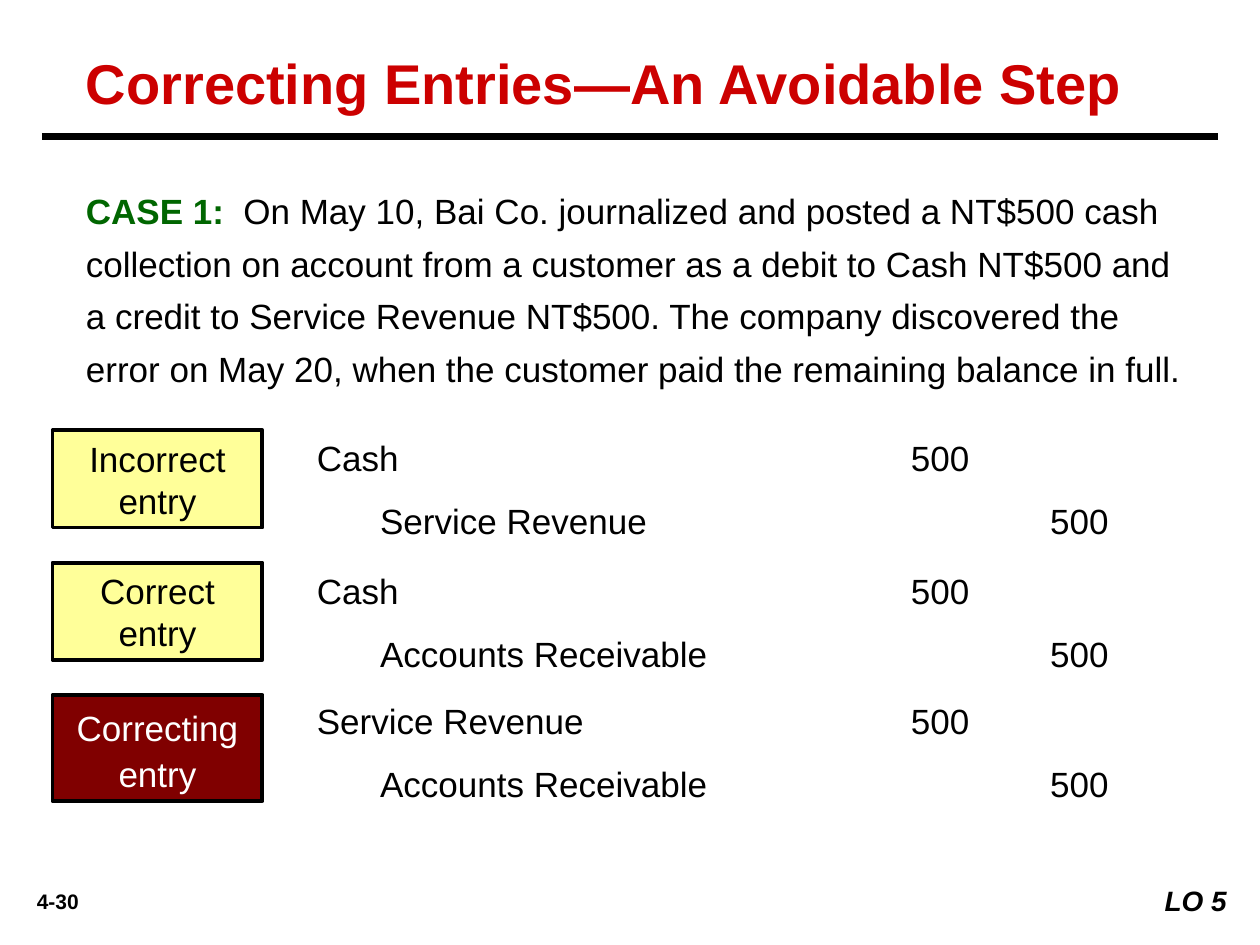
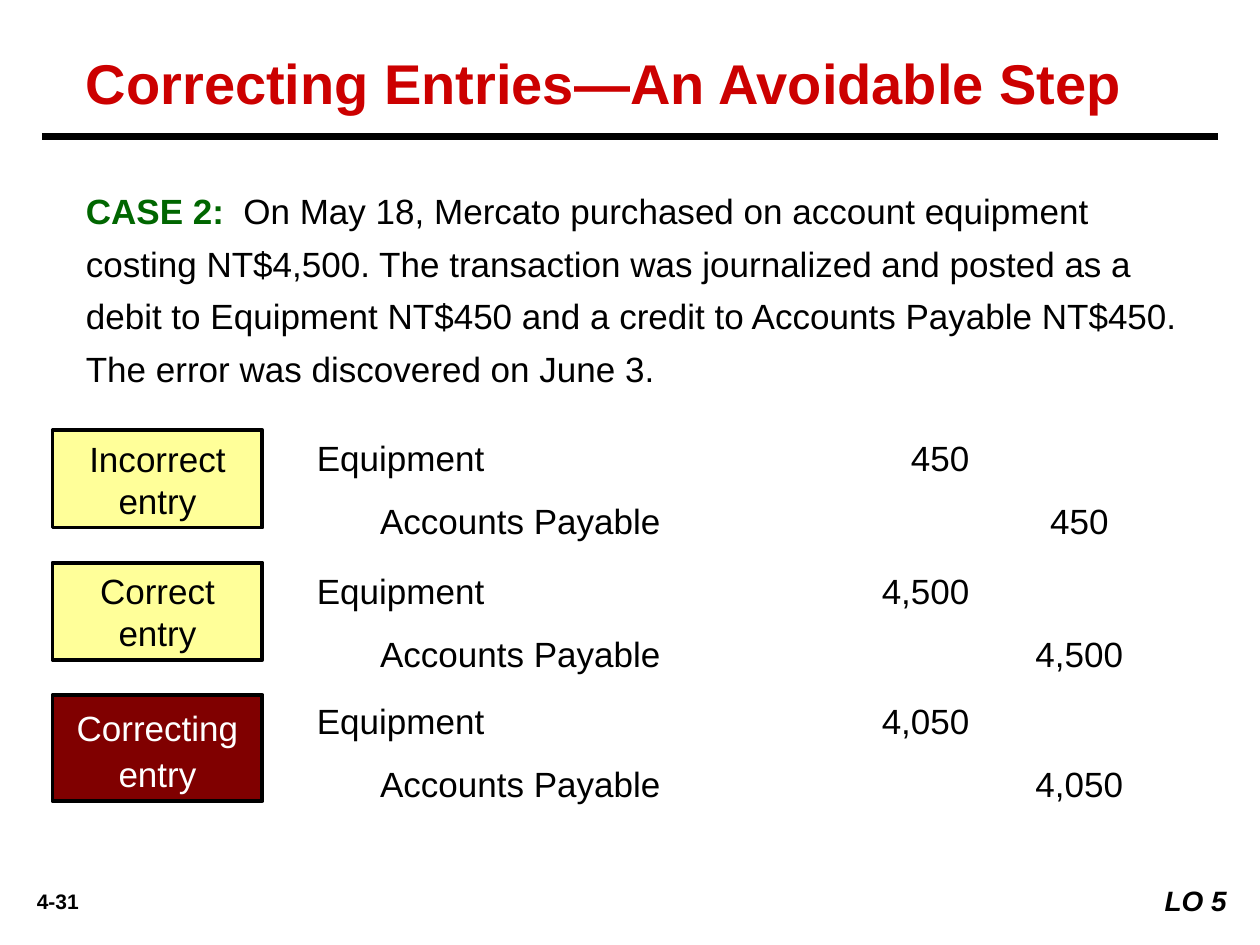
from dataclasses import dataclass

from lxml import etree
from pptx import Presentation
from pptx.dml.color import RGBColor
from pptx.enum.shapes import MSO_CONNECTOR, MSO_SHAPE
from pptx.enum.text import MSO_ANCHOR, PP_ALIGN
from pptx.oxml.ns import qn
from pptx.util import Emu, Inches, Pt

LEFT, CENTER, RIGHT = PP_ALIGN.LEFT, PP_ALIGN.CENTER, PP_ALIGN.RIGHT
TOP, MIDDLE = MSO_ANCHOR.TOP, MSO_ANCHOR.MIDDLE
RECTANGLE = MSO_SHAPE.RECTANGLE
STRAIGHT = MSO_CONNECTOR.STRAIGHT

COLUMNS, ROWS = 120, 90
INSET = 0.1


@dataclass(frozen=True)
class Theme:
    font: str = "Arial"
    ink: str = "000000"
    paper: str = "FFFFFF"
    title: str = "CC0000"
    case: str = "006600"
    draft: str = "FFFF99"
    correction: str = "800000"
    title_size: float = 32
    body_size: float = 20
    objective_size: float = 16
    page_size: float = 12
    rule_width: float = 4.5
    border_width: float = 2.25


@dataclass(frozen=True)
class EntryKind:
    label: str
    label_row: float
    label_height: float
    debit_row: float
    fill: str
    ink: str
    spacing: float = 1.0


THEME = Theme()

ENTRY_KINDS = [
    EntryKind("Incorrect\ventry", 41, 9.25, 41, THEME.draft, THEME.ink),
    EntryKind("Correct\ventry", 53.6, 9.25, 53.6, THEME.draft, THEME.ink),
    EntryKind("Correcting\ventry", 66.2, 10.1, 66, THEME.correction, THEME.paper, 1.1),
]
CREDIT_OFFSET = 6
CREDIT_INDENT = 0.5
DEBIT_TAB, CREDIT_TAB = 5.18, 6.05

TITLE = "Correcting Entries—An Avoidable Step"
OBJECTIVE = "LO 5"

CASES = [
    {
        "page": "4-30",
        "case": "CASE 1:",
        "story": "On May 10, Bai Co. journalized and posted a NT$500 cash "
                 "collection on account from a customer as a debit to Cash NT$500 "
                 "and a credit to Service Revenue NT$500. The company discovered "
                 "the error on May 20, when the customer paid the remaining "
                 "balance in full.",
        "entries": [
            ("Cash", "Service Revenue", "500"),
            ("Cash", "Accounts Receivable", "500"),
            ("Service Revenue", "Accounts Receivable", "500"),
        ],
    },
    {
        "page": "4-31",
        "case": "CASE 2:",
        "story": "On May 18, Mercato purchased on account equipment costing "
                 "NT$4,500. The transaction was journalized and posted as a debit "
                 "to Equipment NT$450 and a credit to Accounts Payable NT$450. "
                 "The error was discovered on June 3.",
        "entries": [
            ("Equipment", "Accounts Payable", "450"),
            ("Equipment", "Accounts Payable", "4,500"),
            ("Equipment", "Accounts Payable", "4,050"),
        ],
    },
]


class Deck:
    """Draws on the current slide; places are grid columns and rows."""

    def __init__(self, theme):
        self.theme = theme
        self.presentation = Presentation()
        self.presentation.slide_width = Inches(10)
        self.presentation.slide_height = Inches(7.5)
        self.slide = None

    def new_slide(self):
        blank = self.presentation.slide_layouts[6]
        self.slide = self.presentation.slides.add_slide(blank)

    def place(self, column, row):
        return (Emu(round(column * self.presentation.slide_width / COLUMNS)),
                Emu(round(row * self.presentation.slide_height / ROWS)))

    def style(self, run, size, color, bold=False, italic=False):
        font = run.font
        font.name, font.size = self.theme.font, Pt(size)
        font.bold, font.italic = bold, italic
        font.color.rgb = RGBColor.from_string(color)

    def fill_text(self, shape, text, size, color=None, bold=False, italic=False,
                  align=LEFT, anchor=TOP, spacing=1.0, left_inset=INSET, tab=None):
        """Fill a shape with one paragraph; tab is (inches, alignment)."""
        frame = shape.text_frame
        frame.word_wrap = True
        frame.vertical_anchor = anchor
        frame.margin_left = Inches(left_inset)
        frame.text = text
        paragraph = frame.paragraphs[0]
        paragraph.alignment = align
        paragraph.line_spacing = spacing
        if tab:
            position, tab_align = tab
            properties = paragraph._p.get_or_add_pPr()
            stops = etree.SubElement(properties, qn("a:tabLst"))
            etree.SubElement(stops, qn("a:tab"), pos=str(Inches(position)), algn=tab_align)
        for run in paragraph.runs:
            self.style(run, size, color or self.theme.ink, bold, italic)
        return paragraph

    def text(self, column, row, width, height, text, size, **style):
        box = self.slide.shapes.add_textbox(
            *self.place(column, row), *self.place(width, height))
        return self.fill_text(box, text, size, **style)

    def box(self, column, row, width, height, fill, border=False):
        shape = self.slide.shapes.add_shape(
            RECTANGLE, *self.place(column, row), *self.place(width, height))
        shape.shadow.inherit = False
        shape.fill.solid()
        shape.fill.fore_color.rgb = RGBColor.from_string(fill)
        if border:
            shape.line.color.rgb = RGBColor.from_string(self.theme.ink)
            shape.line.width = Pt(self.theme.border_width)
        else:
            shape.line.fill.background()
        return shape

    def rule(self, start, end, row):
        line = self.slide.shapes.add_connector(
            STRAIGHT, *self.place(start, row), *self.place(end, row))
        line.line.color.rgb = RGBColor.from_string(self.theme.ink)
        line.line.width = Pt(self.theme.rule_width)
        etree.SubElement(line._element.spPr, qn("a:effectLst"))

    def heading(self, title):
        self.text(7, 4, 109, 7.3, title, self.theme.title_size,
                  color=self.theme.title, bold=True)
        self.rule(4, 116, 13)

    def footer(self, page, objective):
        self.text(1, 84, 9, 3.6, page, self.theme.page_size, bold=True, align=CENTER)
        tag = self.box(108, 83.6, 10, 4.4, self.theme.paper)
        self.fill_text(tag, objective, self.theme.objective_size,
                       bold=True, italic=True, align=RIGHT)

    def case(self, name, story):
        paragraph = self.text(7, 16.5, 108, 21.4, name, self.theme.body_size,
                              color=self.theme.case, bold=True,
                              spacing=1.25, tab=(1.25, "l"))
        telling = paragraph.add_run()
        telling.text = f"\t{story}"
        self.style(telling, self.theme.body_size, self.theme.ink)

    def journal_line(self, row, account, amount, tab, indent=0):
        self.text(29, row, 84, 5.4, f"{account}\t{amount}", self.theme.body_size,
                  left_inset=INSET + indent, tab=tab)

    def entry(self, kind, debit, credit, amount):
        label = self.box(5, kind.label_row, 20, kind.label_height, kind.fill, border=True)
        self.fill_text(label, kind.label, self.theme.body_size, color=kind.ink,
                       align=CENTER, anchor=MIDDLE, spacing=kind.spacing, left_inset=0)
        label.text_frame.margin_right = 0
        self.journal_line(kind.debit_row, debit, amount, (DEBIT_TAB, "r"))
        self.journal_line(kind.debit_row + CREDIT_OFFSET, credit, amount,
                          (CREDIT_TAB - CREDIT_INDENT, "ctr"), CREDIT_INDENT)


def main():
    deck = Deck(THEME)
    for content in CASES:
        deck.new_slide()
        deck.heading(TITLE)
        deck.case(content["case"], content["story"])
        for kind, accounts in zip(ENTRY_KINDS, content["entries"]):
            deck.entry(kind, *accounts)
        deck.footer(content["page"], OBJECTIVE)
    deck.presentation.save("out.pptx")


if __name__ == "__main__":
    main()
